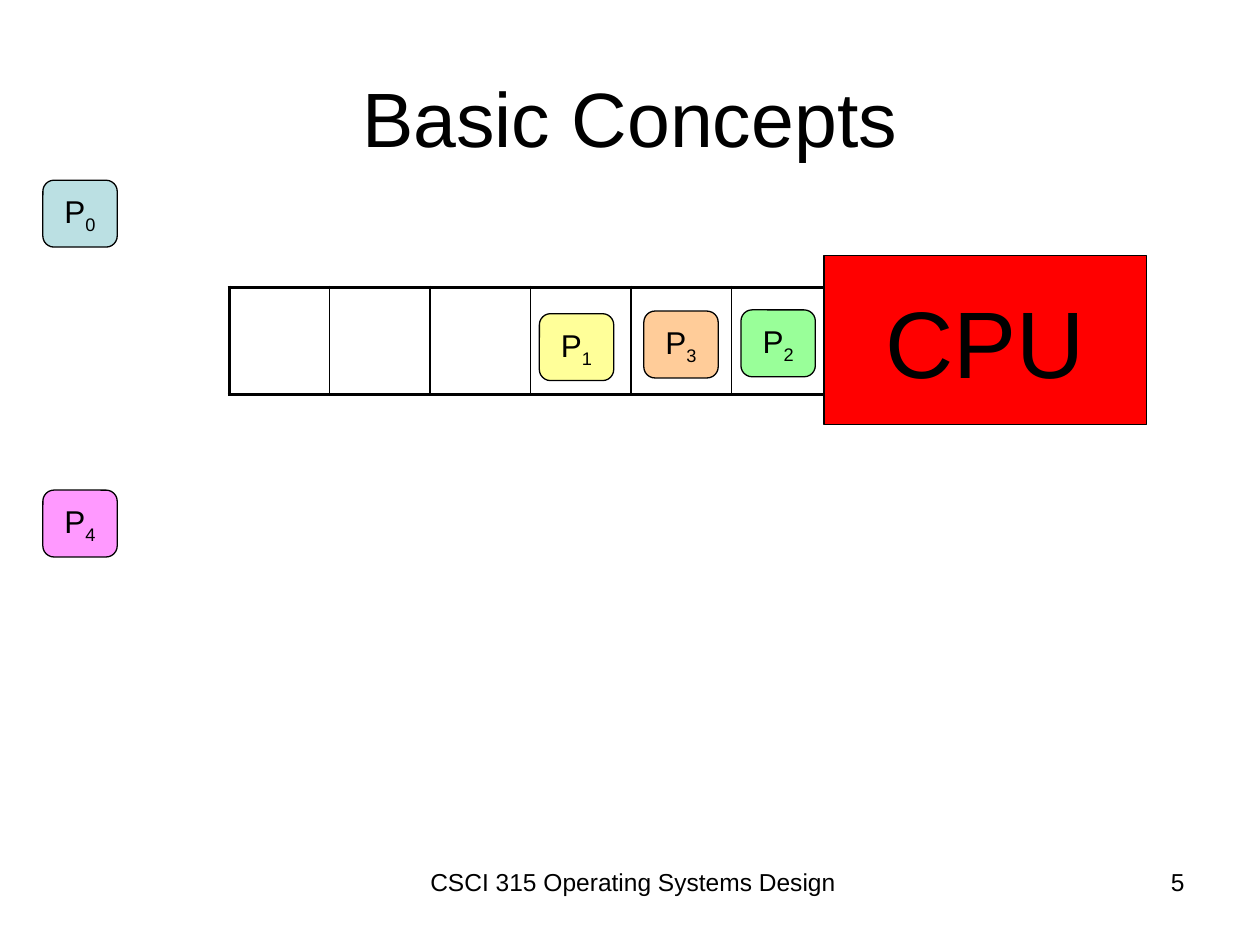
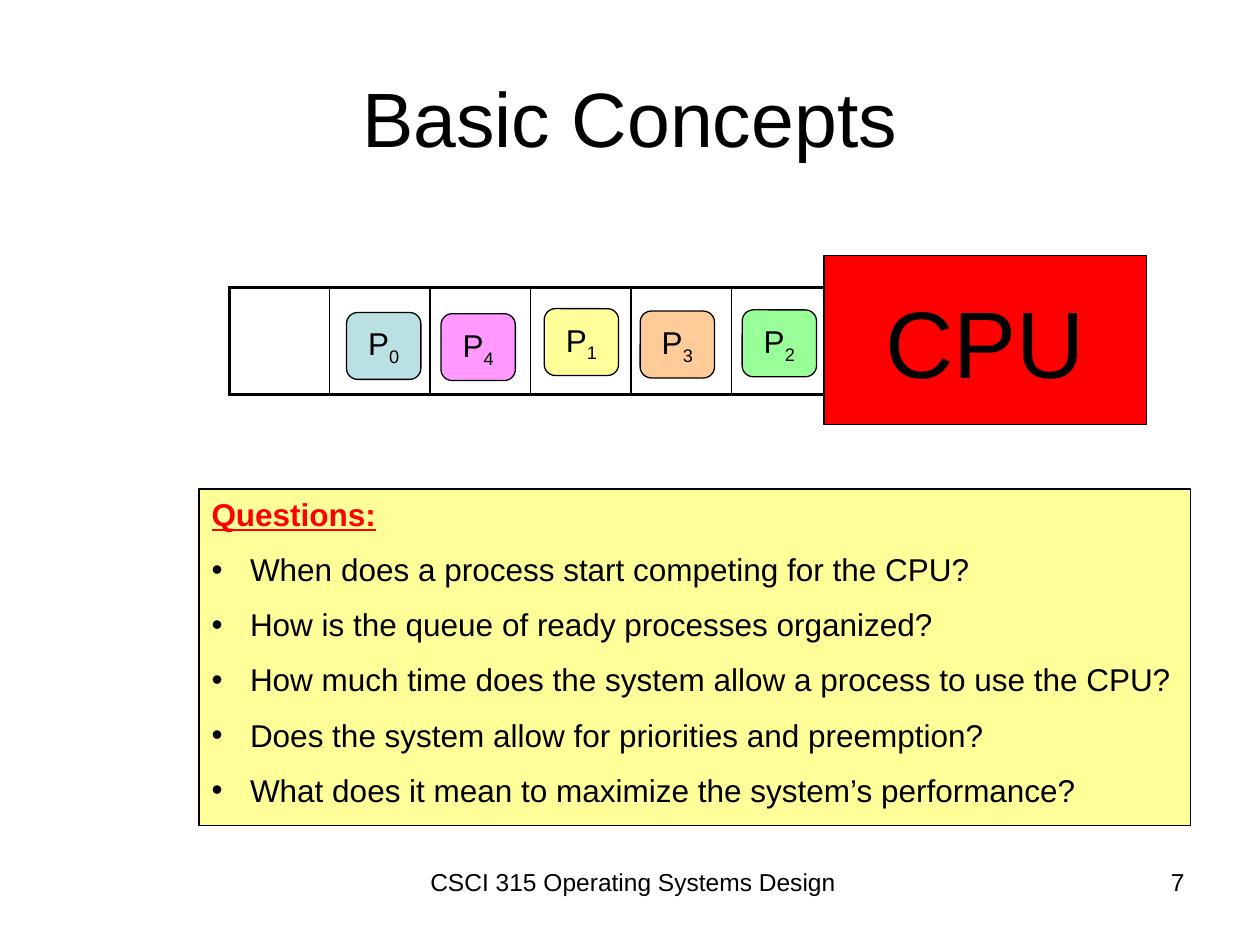
from lxml import etree
from pptx import Presentation
from pptx.dml.color import RGBColor
from pptx.enum.shapes import MSO_SHAPE
from pptx.enum.text import MSO_ANCHOR, PP_ALIGN
from pptx.oxml.ns import qn
from pptx.util import Pt

RECTANGLE, ROUNDED = MSO_SHAPE.RECTANGLE, MSO_SHAPE.ROUNDED_RECTANGLE
LEFT, CENTER, RIGHT = PP_ALIGN.LEFT, PP_ALIGN.CENTER, PP_ALIGN.RIGHT
TOP, MIDDLE = MSO_ANCHOR.TOP, MSO_ANCHOR.MIDDLE

COLORS = {
    "black": "000000", "red": "FF0000", "yellow": "FFFF99", "blue": "BBE0E3",
    "orange": "FFCC99", "pink": "FF99FF", "green": "99FF99",
}
FONT = "Arial"
TITLE = "Basic Concepts"
FOOTER = "CSCI 315 Operating Systems Design"

# Shared measures in points
TITLE_BOX = (36, 21.6, 648, 90)
FOOTER_BOX = (211.7, 491.8, 300.2, 37.4)
NUMBER_BOX = (516.2, 491.8, 167.8, 37.4)
QUEUE_BOX = (131, 164.2, 459.4, 61.2)
CPU_BOX = (470.9, 146.2, 184.3, 96.5)
QUESTIONS_BOX = (113.8, 279.4, 566.6, 192.2)
PROCESS_SIZE = (42.5, 38.2)
QUEUE_SLOTS = 8
THIN, THICK = 1, 2.25
BULLET_INDENT = 22

PROCESS_COLORS = ["blue", "yellow", "green", "orange", "pink"]
QUESTIONS = [
    "When does a process start competing for the CPU?",
    "How is the queue of ready processes organized?",
    "How much time does the system allow a process to use the CPU?",
    "Does the system allow for priorities and preemption?",
    "What does it mean to maximize the system’s performance?",
]
# Slide number, and the left and top of each process by its index
SLIDES = [
    {"number": 5, "questions": [],
     "processes": {0: (24.5, 103), 1: (308.2, 179.3), 3: (367.9, 177.8),
                   4: (24.5, 280.1), 2: (423.4, 177.1)}},
    {"number": 7, "questions": QUESTIONS,
     "processes": {0: (198, 178.6), 1: (311, 176.4), 3: (365.8, 177.8),
                   4: (252, 179.3), 2: (424.1, 177.1)}},
]


def add_text(paragraph, text, size, color="black", **formats):
    run = paragraph.add_run()
    run.text = text
    run.font.color.rgb = RGBColor.from_string(COLORS[color])
    for name, value in {"name": FONT, "size": Pt(size), **formats}.items():
        setattr(run.font, name, value)
    return run


def add_box(slide, kind, box, fill, anchor=MIDDLE, alignment=CENTER, wrap=False):
    shape = slide.shapes.add_shape(kind, *map(Pt, box))
    shape.shadow.inherit = False
    shape.fill.solid()
    shape.fill.fore_color.rgb = RGBColor.from_string(COLORS[fill])
    shape.line.color.rgb = RGBColor.from_string(COLORS["black"])
    shape.line.width = Pt(0.75)
    shape.text_frame.word_wrap = wrap
    shape.text_frame.vertical_anchor = anchor
    shape.text_frame.paragraphs[0].alignment = alignment
    return shape


presentation = Presentation()
presentation.slide_width, presentation.slide_height = Pt(720), Pt(540)

for content in SLIDES:
    slide = presentation.slides.add_slide(presentation.slide_layouts[5])

    # Title
    title = slide.shapes.title
    for name, value in zip(("left", "top", "width", "height"), TITLE_BOX):
        setattr(title, name, Pt(value))
    title.text_frame.vertical_anchor = MIDDLE
    title.text_frame.paragraphs[0].alignment = CENTER
    add_text(title.text_frame.paragraphs[0], TITLE, 44)

    # Footer and slide number
    for box, text, alignment in ((FOOTER_BOX, FOOTER, CENTER),
                                 (NUMBER_BOX, str(content["number"]), RIGHT)):
        text_frame = slide.shapes.add_textbox(*map(Pt, box)).text_frame
        text_frame.word_wrap = True
        text_frame.paragraphs[0].alignment = alignment
        add_text(text_frame.paragraphs[0], text, 14)

    # Ready queue: thick outside, thin between the slots
    table = slide.shapes.add_table(1, QUEUE_SLOTS, *map(Pt, QUEUE_BOX)).table
    table.first_row = table.horz_banding = False
    for slot, cell in enumerate(table.rows[0].cells):
        table.columns[slot].width = Pt(QUEUE_BOX[2] / QUEUE_SLOTS)
        borders = {
            "a:lnL": THICK if slot == 0 else THIN,
            "a:lnR": THICK if slot == QUEUE_SLOTS - 1 else THIN,
            "a:lnT": THICK, "a:lnB": THICK,
        }
        properties = cell._tc.get_or_add_tcPr()
        for tag, width in borders.items():
            line = etree.SubElement(properties, qn(tag), w=str(Pt(width)))
            fill = etree.SubElement(line, qn("a:solidFill"))
            etree.SubElement(fill, qn("a:srgbClr"), val=COLORS["black"])
        cell.fill.background()

    # CPU
    cpu = add_box(slide, RECTANGLE, CPU_BOX, "red")
    add_text(cpu.text_frame.paragraphs[0], "CPU", 54)

    # Processes
    for index, position in content["processes"].items():
        process = add_box(slide, ROUNDED, position + PROCESS_SIZE, PROCESS_COLORS[index])
        paragraph = process.text_frame.paragraphs[0]
        add_text(paragraph, "P", 18)
        subscript = add_text(paragraph, str(index), 18)
        subscript.font._element.set("baseline", "-25000")

    # Questions
    if content["questions"]:
        panel = add_box(slide, RECTANGLE, QUESTIONS_BOX, "yellow", TOP, LEFT, True)
        text_frame = panel.text_frame
        add_text(text_frame.paragraphs[0], "Questions:", 18, "red", bold=True, underline=True)
        for question in content["questions"]:
            paragraph = text_frame.add_paragraph()
            paragraph.alignment = LEFT
            paragraph.space_before = Pt(9.9)
            properties = paragraph._p.get_or_add_pPr()
            properties.set("marL", str(Pt(BULLET_INDENT)))
            properties.set("indent", str(-Pt(BULLET_INDENT)))
            bullet_color = etree.SubElement(properties, qn("a:buClr"))
            etree.SubElement(bullet_color, qn("a:srgbClr"), val=COLORS["black"])
            etree.SubElement(properties, qn("a:buFont"), typeface=FONT)
            etree.SubElement(properties, qn("a:buChar"), char="•")
            add_text(paragraph, question, 18)

presentation.save("out.pptx")
